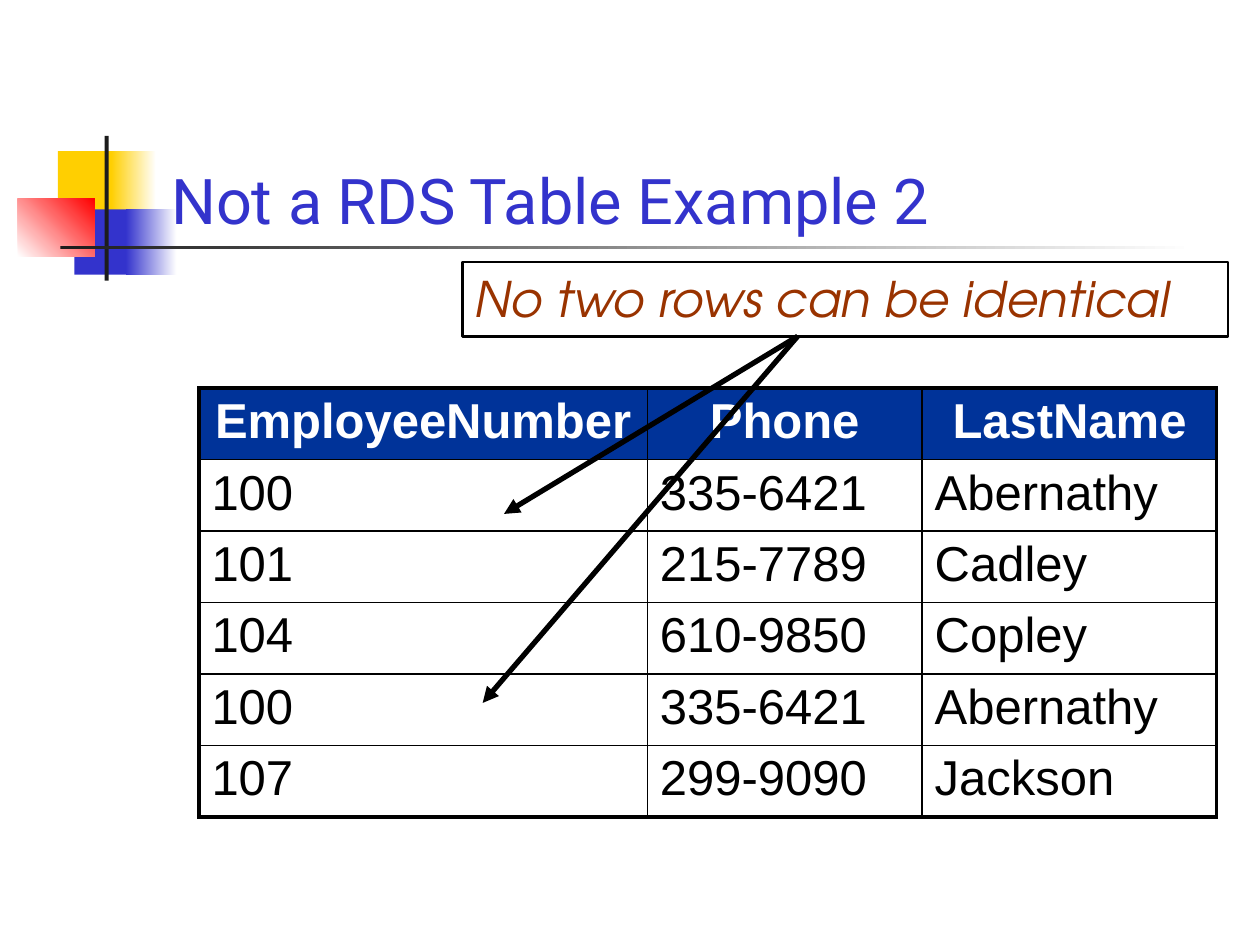
"""Build the slide showing a table that breaks the rule on identical rows."""
from typing import NamedTuple, Optional

from lxml import etree
from pptx import Presentation
from pptx import util as u
from pptx.dml.color import RGBColor
from pptx.enum import shapes, text
from pptx.oxml import ns

WHITE = RGBColor(0xFF, 0xFF, 0xFF)
BLACK = RGBColor(0, 0, 0)
CHARCOAL = RGBColor(0x1C, 0x1C, 0x1C)
YELLOW = RGBColor(0xFF, 0xCF, 0x01)
INDIGO = RGBColor(0x33, 0x33, 0xCC)
RED = RGBColor(0xFF, 0, 0)
NAVY = RGBColor(0, 0x33, 0x99)
RUST = RGBColor(0x99, 0x33, 0)


class Block(NamedTuple):
    left: float
    top: float
    width: float
    height: float
    color: RGBColor
    fade_to: Optional[RGBColor] = None
    angle: float = 0


class Arrow(NamedTuple):
    end_x: float
    end_y: float


ORNAMENT = [
    Block(1.17, 3.05, 1.22, 1.32, YELLOW),
    Block(2.24, 3.05, 0.91, 1.32, YELLOW, WHITE),
    Block(1.5, 4.22, 1.17, 1.32, INDIGO),
    Block(2.54, 4.22, 1.02, 1.32, INDIGO, WHITE),
    Block(0.36, 4.01, 1.55, 1.17, WHITE, RED, 45),
    Block(2.11, 2.74, 0.08, 2.92, CHARCOAL),
    Block(1.22, 4.95, 22.86, 0.08, CHARCOAL, WHITE),
]
EMPLOYEES = [
    ("EmployeeNumber", "Phone", "LastName"),
    ("100", "335-6421", "Abernathy"),
    ("101", "215-7789", "Cadley"),
    ("104", "610-9850", "Copley"),
    ("100", "335-6421", "Abernathy"),
    ("107", "299-9090", "Jackson"),
]
COLUMN_WIDTHS = (9.04, 5.54, 5.94)
ROW_HEIGHT = 1.44
ARROW_START = (16.08, 6.78)
DUPLICATE_ARROWS = [Arrow(9.73, 14.17), Arrow(10.16, 10.36)]


def write(frame, words: str, *, size: float, font: str, color: RGBColor,
          bold: bool = False, italic: bool = False,
          align=text.PP_ALIGN.LEFT) -> None:
    """Put one formatted run in a text frame."""
    frame.word_wrap = True
    paragraph = frame.paragraphs[0]
    paragraph.alignment = align
    run = paragraph.add_run()
    run.text = words
    run.font.size = u.Pt(size)
    run.font.name = font
    run.font.bold = bold
    run.font.italic = italic
    run.font.color.rgb = color


def draw_block(slide, block: Block) -> None:
    """Draw one solid or fading rectangle of the ornament."""
    panel = slide.shapes.add_shape(
        shapes.MSO_SHAPE.RECTANGLE, *map(u.Cm, block[:4]))
    panel.shadow.inherit = False
    panel.line.fill.background()
    if block.fade_to is None:
        panel.fill.solid()
        panel.fill.fore_color.rgb = block.color
        return
    panel.fill.gradient()
    panel.fill.gradient_angle = block.angle
    for stop, color in zip(panel.fill.gradient_stops, (block.color, block.fade_to)):
        stop.color.rgb = color


def add_border(cell, side: str, points: float) -> None:
    """Give one side of a cell a black line."""
    properties = cell._tc.get_or_add_tcPr()
    line = etree.SubElement(properties, ns.qn(f"a:ln{side}"), w=str(u.Pt(points)))
    fill = etree.SubElement(line, ns.qn("a:solidFill"))
    etree.SubElement(fill, ns.qn("a:srgbClr"), val=str(BLACK))


def draw_employees(slide) -> None:
    """Draw the employee table with a heavy outer frame."""
    last_row, last_column = len(EMPLOYEES) - 1, len(COLUMN_WIDTHS) - 1
    table = slide.shapes.add_table(
        len(EMPLOYEES), len(COLUMN_WIDTHS), u.Cm(4.01), u.Cm(7.82),
        u.Cm(sum(COLUMN_WIDTHS)), u.Cm(ROW_HEIGHT * len(EMPLOYEES))).table
    table.horz_banding = False
    for column, width in zip(table.columns, COLUMN_WIDTHS):
        column.width = u.Cm(width)
    for r, record in enumerate(EMPLOYEES):
        table.rows[r].height = u.Cm(ROW_HEIGHT)
        header = r == 0
        for c, value in enumerate(record):
            cell = table.cell(r, c)
            outer = {"L": c == 0, "R": c == last_column,
                     "T": header, "B": r == last_row}
            for side, heavy in outer.items():
                add_border(cell, side, 2.25 if heavy else 1)
            if header:
                cell.fill.solid()
                cell.fill.fore_color.rgb = NAVY
            else:
                cell.fill.background()
            write(cell.text_frame, value, size=28, font="Arial", bold=header,
                  color=WHITE if header else BLACK,
                  align=text.PP_ALIGN.CENTER if header else text.PP_ALIGN.LEFT)


def draw_arrow(slide, arrow: Arrow) -> None:
    """Draw an arrow from the rule to a duplicate row."""
    pointer = slide.shapes.add_connector(
        shapes.MSO_CONNECTOR.STRAIGHT, *map(u.Cm, ARROW_START + arrow))
    pointer.line.color.rgb = BLACK
    pointer.line.width = u.Pt(3)
    etree.SubElement(pointer.line._get_or_add_ln(), ns.qn("a:tailEnd"), type="triangle")
    etree.SubElement(pointer._element.spPr, ns.qn("a:effectLst"))


def main() -> None:
    """Build and save the slide."""
    deck = Presentation()
    deck.slide_width, deck.slide_height = u.Cm(25.4), u.Cm(19.05)
    slide = deck.slides.add_slide(deck.slide_layouts[6])
    for block in ORNAMENT:
        draw_block(slide, block)

    title = slide.shapes.add_textbox(u.Cm(3.2), u.Cm(1.73), u.Cm(21.64), u.Cm(3.18))
    title.text_frame.vertical_anchor = text.MSO_ANCHOR.BOTTOM
    write(title.text_frame, "Not a RDS Table Example 2",
          size=36, font="Roboto", color=INDIGO)

    draw_employees(slide)

    rule = slide.shapes.add_textbox(u.Cm(9.32), u.Cm(5.28), u.Cm(15.44), u.Cm(1.5))
    rule.line.color.rgb = BLACK
    rule.line.width = u.Pt(1.5)
    write(rule.text_frame, "No two rows can be identical",
          size=28, font="TeX Gyre Adventor", color=RUST, italic=True)

    for arrow in DUPLICATE_ARROWS:
        draw_arrow(slide, arrow)
    deck.save("out.pptx")


if __name__ == "__main__":
    main()
